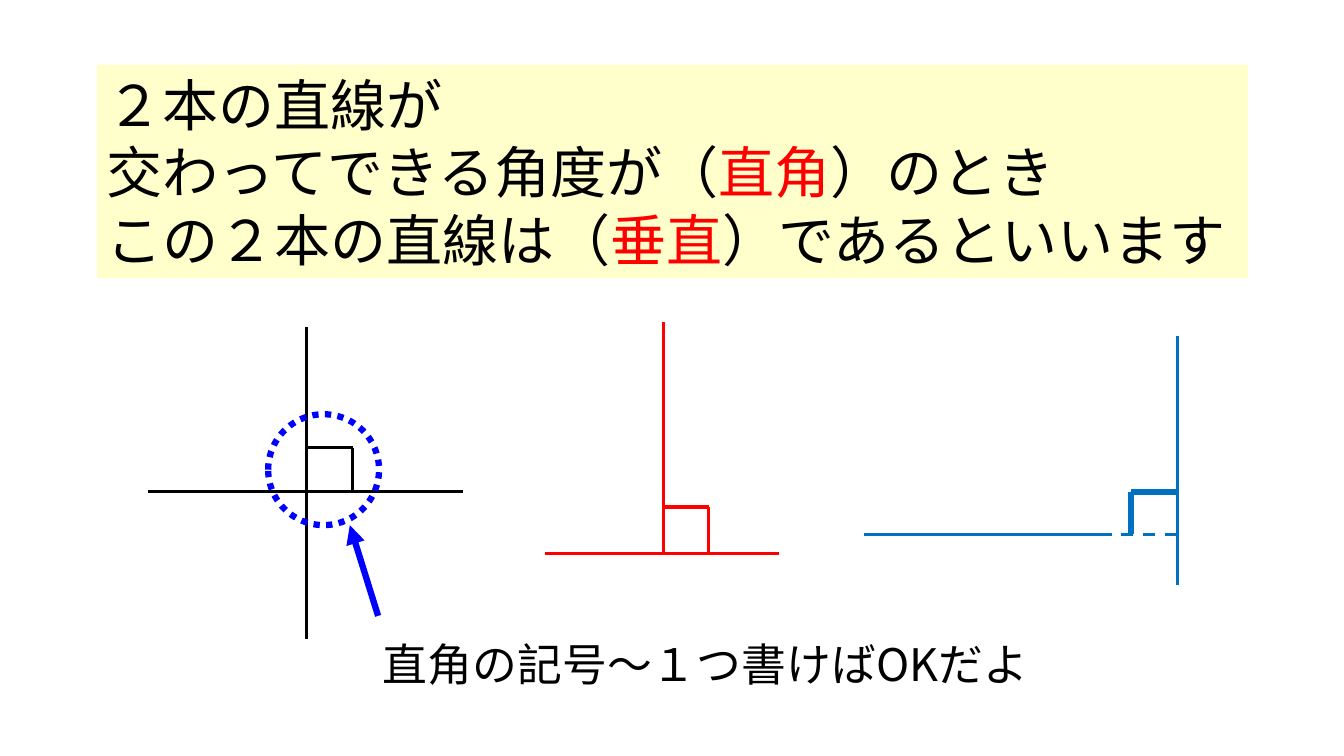
from dataclasses import dataclass

from lxml import etree
from pptx import Presentation
from pptx.dml.color import RGBColor
from pptx.enum.dml import MSO_LINE
from pptx.enum.shapes import MSO_CONNECTOR, MSO_SHAPE
from pptx.enum.text import MSO_ANCHOR, PP_ALIGN
from pptx.oxml.ns import qn
from pptx.util import Inches, Pt

STRAIGHT = MSO_CONNECTOR.STRAIGHT
RECTANGLE, OVAL = MSO_SHAPE.RECTANGLE, MSO_SHAPE.OVAL
DASH, ROUND_DOT = MSO_LINE.DASH, MSO_LINE.ROUND_DOT
LEFT, TOP = PP_ALIGN.LEFT, MSO_ANCHOR.TOP

FONT = "Noto Sans CJK JP"
LINE_HEIGHT = 1.21
COLORS = {
    "black": "000000",
    "red": "FF0000",
    "blue": "0070C0",
    "marker": "0000FF",
    "cream": "FFFFCC",
}


@dataclass(frozen=True)
class Segment:
    start: tuple[float, float]
    end: tuple[float, float]
    color: str
    width: float = 2.25
    dashed: bool = False
    arrow: bool = False


@dataclass(frozen=True)
class RightAngle:
    """Square corner mark: its outer corner, and the two lines it reaches."""
    corner: tuple[float, float]
    vertical_x: float
    horizontal_y: float
    color: str
    width: float = 2.25

    def segments(self) -> list[Segment]:
        x, y = self.corner
        ends = [(self.vertical_x, y), (x, self.horizontal_y)]
        return [Segment(self.corner, end, self.color, self.width) for end in ends]


# Each paragraph is a list of (text, color) runs.
DEFINITION = [
    [("２本の直線が", "black")],
    [("交わってできる角度が（", "black"), ("直角", "red"), ("）のとき", "black")],
    [("この２本の直線は（", "black"), ("垂直", "red"), ("）であるといいます", "black")],
]
HINT = [[("直角の記号～１つ書けばOKだよ", "black")]]

LINES = [
    Segment((3.04, 3.24), (3.04, 6.34), "black"),
    Segment((1.47, 4.88), (4.59, 4.88), "black"),
    Segment((5.41, 5.49), (7.73, 5.49), "red"),
    Segment((6.58, 3.19), (6.58, 5.49), "red"),
    Segment((8.57, 5.3), (10.9, 5.3), "blue"),
    Segment((11.68, 3.33), (11.68, 5.8), "blue"),
    Segment((10.9, 5.3), (11.68, 5.3), "blue", dashed=True),
]
RIGHT_ANGLES = [
    RightAngle((3.5, 4.44), 3.04, 4.88, "black"),
    RightAngle((7.03, 5.03), 6.58, 5.48, "red"),
    RightAngle((11.22, 4.88), 11.68, 5.3, "blue", 4.5),
]
POINTER = Segment((3.75, 6.11), (3.47, 5.21), "marker", 4.5, arrow=True)


def rgb(color: str) -> RGBColor:
    return RGBColor.from_string(COLORS[color])


def draw_segment(slide, segment: Segment) -> None:
    points = [Inches(value) for value in segment.start + segment.end]
    connector = slide.shapes.add_connector(STRAIGHT, *points)
    connector.line.color.rgb = rgb(segment.color)
    connector.line.width = Pt(segment.width)
    if segment.dashed:
        connector.line.dash_style = DASH
    properties = connector._element.spPr
    if segment.arrow:
        outline = properties.find(qn("a:ln"))
        etree.SubElement(outline, qn("a:tailEnd"), type="triangle")
    etree.SubElement(properties, qn("a:effectLst"))


def write_text(shape, paragraphs, size: float, wrap: bool) -> None:
    frame = shape.text_frame
    frame.word_wrap = wrap
    frame.vertical_anchor = TOP
    for index, runs in enumerate(paragraphs):
        paragraph = frame.paragraphs[0] if index == 0 else frame.add_paragraph()
        paragraph.alignment = LEFT
        paragraph.line_spacing = Pt(size * LINE_HEIGHT)
        for text, color in runs:
            run = paragraph.add_run()
            run.text = text
            run.font.size = Pt(size)
            run.font.name = FONT
            run.font.color.rgb = rgb(color)
            latin = run.font._element.find(qn("a:latin"))
            latin.addnext(latin.makeelement(qn("a:ea"), {"typeface": FONT}))


def draw_definition(slide) -> None:
    box = slide.shapes.add_shape(
        RECTANGLE, Inches(0.96), Inches(0.64), Inches(11.42), Inches(2.12))
    box.shadow.inherit = False
    box.fill.solid()
    box.fill.fore_color.rgb = rgb("cream")
    box.line.fill.background()
    write_text(box, DEFINITION, 40, wrap=False)


def draw_marker_circle(slide) -> None:
    circle = slide.shapes.add_shape(
        OVAL, Inches(2.66), Inches(4.11), Inches(1.1), Inches(1.1))
    circle.shadow.inherit = False
    circle.fill.background()
    circle.line.color.rgb = rgb("marker")
    circle.line.width = Pt(4.5)
    circle.line.dash_style = ROUND_DOT


def main() -> None:
    presentation = Presentation()
    presentation.slide_width = Inches(13.33)
    presentation.slide_height = Inches(7.5)
    slide = presentation.slides.add_slide(presentation.slide_layouts[6])

    draw_definition(slide)
    for segment in LINES:
        draw_segment(slide, segment)
    for right_angle in RIGHT_ANGLES:
        for segment in right_angle.segments():
            draw_segment(slide, segment)
    hint = slide.shapes.add_textbox(
        Inches(3.7), Inches(6.26), Inches(6.87), Inches(0.64))
    write_text(hint, HINT, 32, wrap=True)
    draw_marker_circle(slide)
    draw_segment(slide, POINTER)

    presentation.save("out.pptx")


if __name__ == "__main__":
    main()
